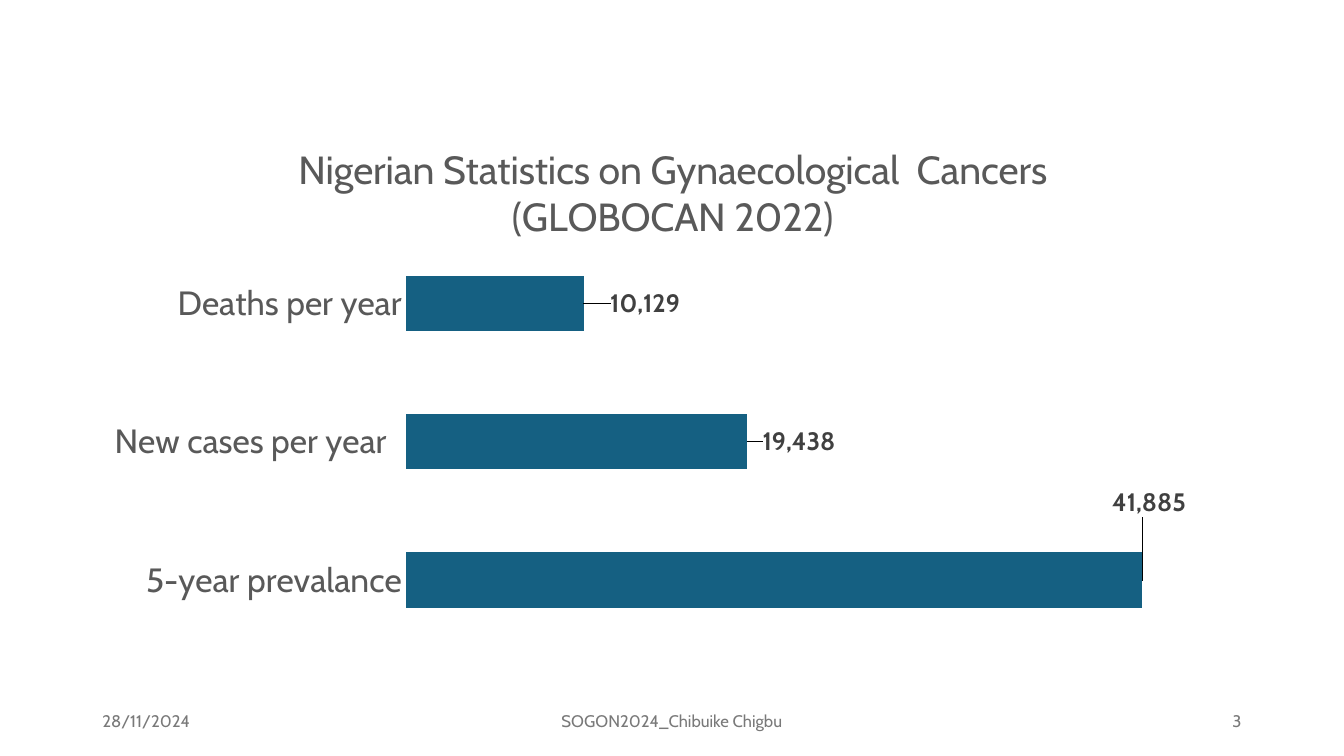
from pptx import Presentation
from pptx.chart.data import CategoryChartData
from pptx.dml.color import RGBColor
from pptx.enum.chart import XL_CHART_TYPE as ChartType
from pptx.enum.chart import XL_LABEL_POSITION as LabelPosition
from pptx.enum.chart import XL_TICK_LABEL_POSITION as TickLabels
from pptx.enum.chart import XL_TICK_MARK as TickMark
from pptx.enum.text import MSO_ANCHOR as Anchor
from pptx.enum.text import PP_ALIGN as Align
from pptx.oxml import parse_xml
from pptx.oxml.ns import nsdecls
from pptx.util import Pt

FONT = "Cabin"
STATISTICS = {
    "5-year prevalance": 41885,
    "New cases per year  ": 19438,
    "Deaths per year": 10129,
}
LABEL_SHIFTS = [(-0.03, -0.14), (0.01, 0), (0.02, 0)]
TITLE_LINES = ["Nigerian Statistics on Gynaecological  Cancers", "(GLOBOCAN 2022)"]


def color(value):
    return RGBColor.from_string(value)


def set_font(font, shade, **formats):
    font.color.rgb = color(shade)
    for name, value in {"name": FONT, **formats}.items():
        setattr(font, name, value)


def place(parent, index, **layout):
    """Give a chart part a manual layout, in fractions of the chart."""
    for old in parent.xpath("c:layout"):
        parent.remove(old)
    values = "".join(f'<c:{key} val="{value}"/>' for key, value in layout.items())
    parent.insert(index, parse_xml(
        f'<c:layout {nsdecls("c")}><c:manualLayout>{values}</c:manualLayout></c:layout>'))


def add_title(chart):
    frame = chart.chart_title.text_frame
    for number, line in enumerate(TITLE_LINES):
        para = frame.add_paragraph() if number else frame.paragraphs[0]
        para.alignment = Align.CENTER
        span = para.add_run()
        span.text = line
        set_font(span.font, "595959", size=Pt(28), bold=False)
    chart.chart_title.include_in_layout = False
    place(chart.element.xpath("c:chart/c:title")[0], 1,
          xMode="edge", yMode="edge", x=0.18, y=0.07)


def format_axes(chart):
    categories, values = chart.category_axis, chart.value_axis
    categories.major_tick_mark = TickMark.NONE
    categories.format.line.fill.background()
    categories.has_major_gridlines = False
    set_font(categories.tick_labels.font, "595959", size=Pt(24))
    limits = {"minimum_scale": 0, "maximum_scale": 45000, "visible": False,
              "has_major_gridlines": False, "tick_label_position": TickLabels.NONE}
    for name, value in limits.items():
        setattr(values, name, value)


def add_bars(chart):
    plot = chart.plots[0]
    plot.gap_width = 150
    plot.vary_by_categories = False
    series = plot.series[0]
    series.format.fill.solid()
    series.format.fill.fore_color.rgb = color("156082")
    for number in range(len(STATISTICS)):
        label = series.points[number].data_label
        set_font(label.font, "404040", size=Pt(18), bold=True)
        label.position = LabelPosition.OUTSIDE_END
    for label, (x, y) in zip(chart.element.xpath(".//c:dLbl"), LABEL_SHIFTS):
        place(label, 1, x=x, y=y)


def add_statistics(page, left, top, width, height):
    data = CategoryChartData(number_format="#,##0")
    data.categories = list(STATISTICS)
    data.add_series("Series 1", list(STATISTICS.values()))
    chart = page.shapes.add_chart(ChartType.BAR_CLUSTERED, Pt(left), Pt(top),
                                  Pt(width), Pt(height), data).chart
    chart.has_legend = False
    set_font(chart.font, "000000", size=Pt(10))
    add_title(chart)
    format_axes(chart)
    add_bars(chart)
    place(chart.element.xpath(".//c:plotArea")[0], 0, layoutTarget="inner",
          xMode="edge", yMode="edge", x=0.278, y=0.236, w=0.702, h=0.746)


def add_footer(page, left, top, width, height):
    side, middle = 216, 324
    parts = [
        ("28/11/2024", left, side, Align.LEFT),
        ("SOGON2024_Chibuike Chigbu", left + (width - middle) / 2, middle, Align.CENTER),
        ("3", left + width - side, side, Align.RIGHT),
    ]
    for text, x, part_width, alignment in parts:
        box = page.shapes.add_textbox(Pt(x), Pt(top), Pt(part_width), Pt(height))
        frame = box.text_frame
        frame.word_wrap = True
        frame.vertical_anchor = Anchor.MIDDLE
        para = frame.paragraphs[0]
        para.alignment = alignment
        span = para.add_run()
        span.text = text
        set_font(span.font, "797979", size=Pt(12))


def main():
    deck = Presentation()
    deck.slide_width, deck.slide_height = Pt(960), Pt(540)
    page = deck.slides.add_slide(deck.slide_layouts[6])
    add_footer(page, 66, 500.5, 828, 28.75)
    add_statistics(page, 66, 73.5, 805, 397.5)
    deck.save("out.pptx")


if __name__ == "__main__":
    main()
